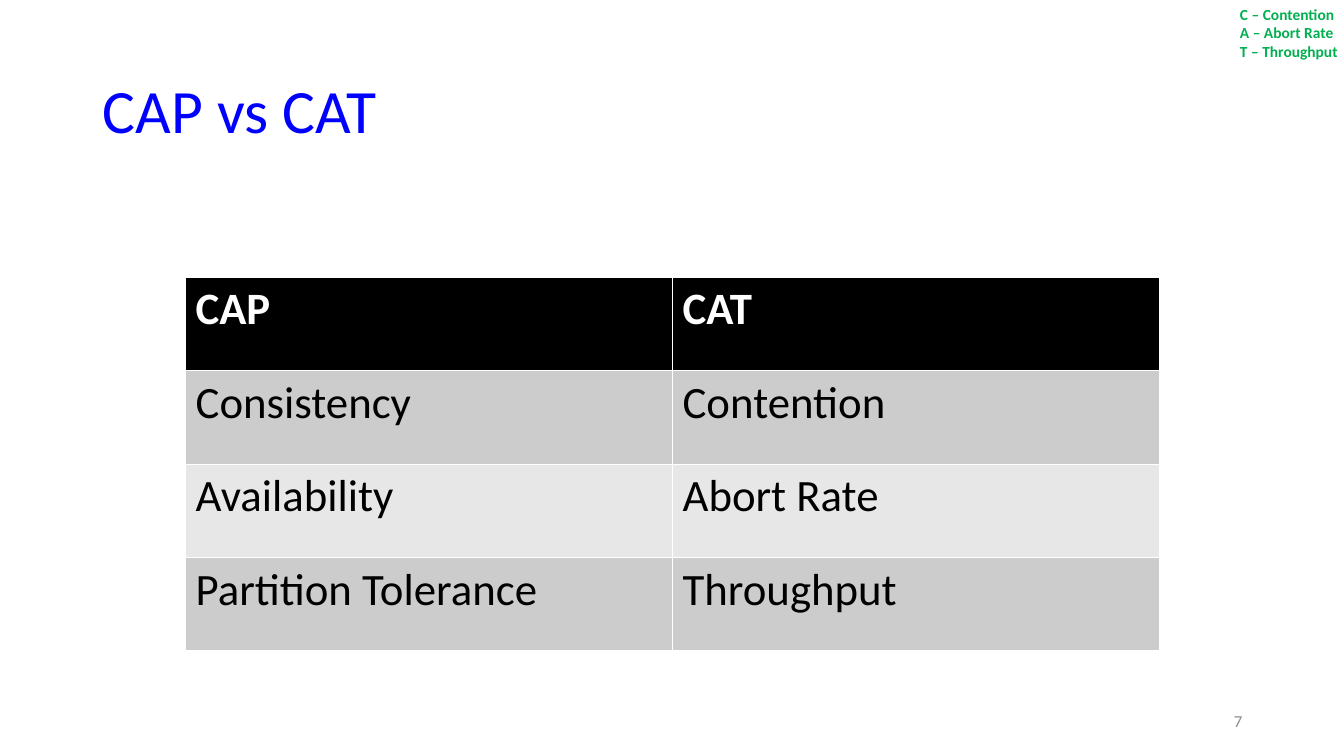
"""Build the CAP vs CAT comparison slide."""
import dataclasses

import pptx
import pptx.dml.color
import pptx.enum.text
import pptx.util

Inches = pptx.util.Inches
Align = pptx.enum.text.PP_ALIGN
Anchor = pptx.enum.text.MSO_ANCHOR

ROWS = [
    ("CAP", "CAT"),
    ("Consistency", "Contention"),
    ("Availability", "Abort Rate"),
    ("Partition Tolerance", "Throughput"),
]
HEADER_FILL = "000000"
BAND_FILLS = ("E7E7E7", "CCCCCC")


@dataclasses.dataclass(frozen=True)
class Label:
    box: tuple[float, float, float, float]
    lines: tuple[str, ...]
    size: int
    color: str
    bold: bool = False
    align: Align = Align.LEFT
    anchor: Anchor = Anchor.TOP
    wrap: bool = True
    auto_size: pptx.enum.text.MSO_AUTO_SIZE = pptx.enum.text.MSO_AUTO_SIZE.NONE


TITLE = Label((0.92, 0.4, 11.5, 1.45), ("CAP vs CAT",), 44, "0000FF", anchor=Anchor.MIDDLE)
LABELS = [
    Label((9.42, 6.95, 3, 0.4), ("7",), 12, "8C8C8C", align=Align.RIGHT, anchor=Anchor.MIDDLE),
    Label((12.2, 0, 1.18, 0.66), ("C – Contention", "A – Abort Rate", "T – Throughput"),
          11, "00B050", bold=True, wrap=False,
          auto_size=pptx.enum.text.MSO_AUTO_SIZE.SHAPE_TO_FIT_TEXT),
]


def rgb(value: str) -> pptx.dml.color.RGBColor:
    return pptx.dml.color.RGBColor.from_string(value)


def set_font(p, size: int, color: str, bold: bool) -> None:
    p.font.name = "Calibri"
    p.font.size = pptx.util.Pt(size)
    p.font.bold = bold
    p.font.color.rgb = rgb(color)


def fill_label(sp, label: Label) -> None:
    sp.left, sp.top, sp.width, sp.height = map(Inches, label.box)
    tf = sp.text_frame
    tf.text = "\n".join(label.lines)
    tf.word_wrap = label.wrap
    tf.auto_size = label.auto_size
    tf.vertical_anchor = label.anchor
    for p in tf.paragraphs:
        p.alignment = label.align
        set_font(p, label.size, label.color, label.bold)


def add_comparison(s) -> None:
    frame = s.shapes.add_table(len(ROWS), len(ROWS[0]), Inches(1.84), Inches(2.75),
                               Inches(9.66), Inches(3.71))
    for i, row in enumerate(ROWS):
        header = i == 0
        for j, text in enumerate(row):
            cell = frame.table.cell(i, j)
            cell.text = text
            cell.fill.solid()
            cell.fill.fore_color.rgb = rgb(HEADER_FILL if header else BAND_FILLS[i % 2])
            set_font(cell.text_frame.paragraphs[0], 32, "FFFFFF" if header else "000000", header)


def main() -> None:
    prs = pptx.Presentation()
    prs.slide_width, prs.slide_height = Inches(13.33), Inches(7.5)
    s = prs.slides.add_slide(prs.slide_layouts[5])
    fill_label(s.shapes.title, TITLE)
    s.shapes.title.text_frame.paragraphs[0].line_spacing = 0.9
    add_comparison(s)
    for label in LABELS:
        fill_label(s.shapes.add_textbox(*map(Inches, label.box)), label)
    prs.save("out.pptx")


if __name__ == "__main__":
    main()
